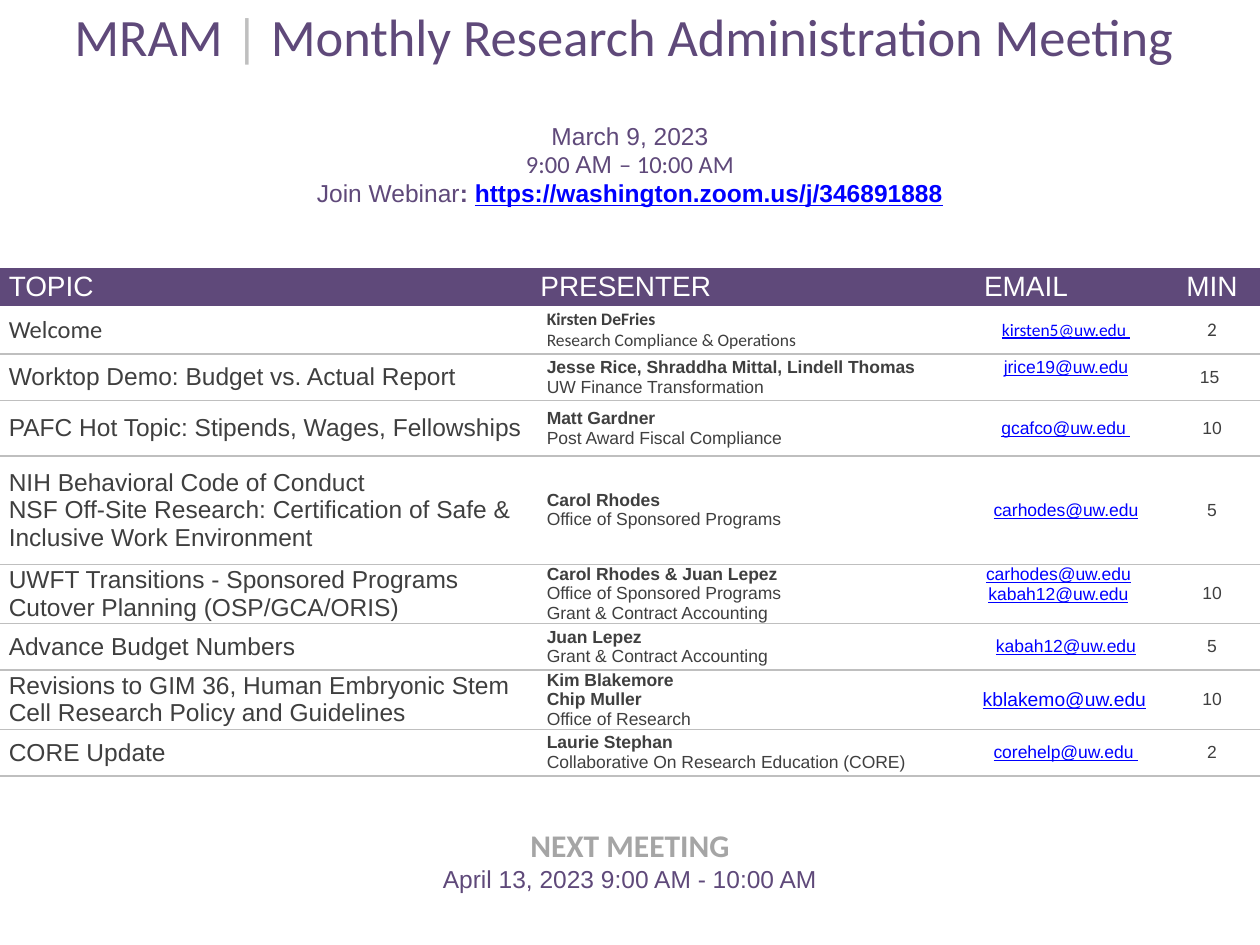
from lxml import etree
from pptx import Presentation
from pptx.dml.color import RGBColor
from pptx.enum.text import MSO_ANCHOR, PP_ALIGN
from pptx.oxml.ns import qn
from pptx.util import Inches, Pt

LEFT, CENTER = PP_ALIGN.LEFT, PP_ALIGN.CENTER
MIDDLE, BOTTOM = MSO_ANCHOR.MIDDLE, MSO_ANCHOR.BOTTOM
PURPLE, GREY, RULE = "5F497A", "A5A5A5", "BFBFBF"
TEXT, LINK, WHITE = "3F3F3F", "0000FF", "FFFFFF"
NO_STYLE = "{2D5ABB26-0587-4C30-8999-92F81FD0307C}"

COLS = [4.22, 3.46, 1.56, 0.76]
HEAD_ROWS, LAST_ROW = [0.56, 1.57, 0.3], 1.09
LINE = 0.15  # height of one line of 10 pt text

# Topic lines, presenters, offices, emails, minutes, row height
AGENDA = [
    (["Welcome"], ["Kirsten DeFries"], ["Research Compliance & Operations"],
     ["kirsten5@uw.edu "], "2", 0.38),
    (["Worktop Demo: Budget vs. Actual Report"],
     ["Jesse Rice, Shraddha Mittal, Lindell Thomas"],
     ["UW Finance Transformation"], ["jrice19@uw.edu"], "15 ", 0.37),
    (["PAFC Hot Topic: Stipends, Wages, Fellowships"], ["Matt Gardner"],
     ["Post Award Fiscal Compliance"], ["gcafco@uw.edu "], "10", 0.44),
    (["NIH Behavioral Code of Conduct",
      "NSF Off-Site Research: Certification of Safe & Inclusive Work Environment"],
     ["Carol Rhodes"], ["Office of Sponsored Programs"],
     ["carhodes@uw.edu"], "5", 0.86),
    (["UWFT Transitions - Sponsored Programs Cutover Planning (OSP/GCA/ORIS)"],
     ["Carol Rhodes & Juan Lepez"],
     ["Office of Sponsored Programs", "Grant & Contract Accounting"],
     ["carhodes@uw.edu", "kabah12@uw.edu"], "10", 0.47),
    (["Advance Budget Numbers"], ["Juan Lepez"],
     ["Grant & Contract Accounting"], ["kabah12@uw.edu"], "5", 0.37),
    (["Revisions to GIM 36, Human Embryonic Stem Cell Research Policy and Guidelines"],
     ["Kim Blakemore", "Chip Muller"], ["Office of Research"],
     ["kblakemo@uw.edu"], "10", 0.47),
    (["CORE Update"], ["Laurie Stephan"],
     ["Collaborative On Research Education (CORE)"],
     ["corehelp@uw.edu "], "2", 0.37),
]


def rgb(value):
    return RGBColor.from_string(value)


def run(text, size=14, color=TEXT, font="Arial", bold=False, underline=False):
    """Return a function that appends the formatted text to a paragraph."""
    def add(p):
        r = p.add_run()
        r.text = text
        f = r.font
        f.size, f.name, f.bold, f.underline = Pt(size), font, bold, underline
        f.color.rgb = rgb(color)
    return add


class Agenda:
    """The current slide and its meeting table."""

    def __init__(self, prs):
        self.slide = prs.slides.add_slide(prs.slide_layouts[6])

    def table(self, cols, rows):
        frame = self.slide.shapes.add_table(
            len(rows), len(cols), 0, 0, Inches(sum(cols)), Inches(sum(rows)))
        self.tbl = frame.table
        self.tbl.first_row = self.tbl.horz_banding = False
        frame._element.find(".//" + qn("a:tableStyleId")).text = NO_STYLE
        for col, width in zip(self.tbl.columns, cols):
            col.width = Inches(width)
        for row, height in zip(self.tbl.rows, rows):
            row.height = Inches(height)

    def cell(self, row, col, lines, align=LEFT, anchor=MIDDLE, fill=WHITE,
             margins=(0.07, 0, 0.07, 0), rule=False):
        """Fill a cell; each line is a list of runs."""
        c = self.tbl.cell(row, col)
        c.vertical_anchor = anchor
        c.margin_left, c.margin_top, c.margin_right, c.margin_bottom = map(Inches, margins)
        c.fill.solid()
        c.fill.fore_color.rgb = rgb(fill)
        if rule:
            self.rule_below(c)
        tf = c.text_frame
        for i, runs in enumerate(lines):
            p = tf.add_paragraph() if i else tf.paragraphs[0]
            p.alignment = align
            for add in runs:
                add(p)

    def wide_cell(self, row, lines, **style):
        """Fill one cell that spans the whole row."""
        self.tbl.cell(row, 0).merge(self.tbl.cell(row, len(COLS) - 1))
        self.cell(row, 0, lines, align=CENTER, **style)

    def rule_below(self, c):
        ln = etree.Element(qn("a:lnB"), w=str(Pt(1)))
        fill = etree.SubElement(ln, qn("a:solidFill"))
        etree.SubElement(fill, qn("a:srgbClr"), val=RULE)
        c._tc.get_or_add_tcPr().insert(0, ln)

    def topic_row(self, row, topic, people, offices, emails, minutes):
        first, large = row == len(HEAD_ROWS), emails == ["kblakemo@uw.edu"]
        font = "Calibri" if first else "Arial"
        self.cell(row, 0, [[run(t, font=font)] for t in topic], rule=True)
        self.cell(row, 1,
                  [[run(t, 10, font=font, bold=True)] for t in people]
                  + [[run(t, 10, font=font)] for t in offices],
                  margins=(0.12, 0, 0.12, 0), rule=True)
        # A pair of emails, and the second row's email, sit one line higher
        pair = len(emails) > 1
        raised = pair or row == len(HEAD_ROWS) + 1
        self.cell(row, 2,
                  [[run(t, 11 if large else 10, LINK, font, underline=True)]
                   for t in emails],
                  align=LEFT if large else CENTER, rule=True,
                  margins=(0 if pair else 0.12, 0, 0.12, LINE if raised else 0))
        self.cell(row, 3, [[run(minutes, 11 if first else 10, font=font)]],
                  align=CENTER, rule=True)


def main():
    prs = Presentation()
    prs.slide_width, prs.slide_height = Inches(10), Inches(7.5)
    s = Agenda(prs)
    s.table(COLS, HEAD_ROWS + [item[-1] for item in AGENDA] + [LAST_ROW])

    # Title
    s.wide_cell(0, [[run("MRAM ", 30, PURPLE, "Calibri"),
                     run("|", 30, RULE, "Calibri"),
                     run(" Monthly Research Administration Meeting ",
                         30, PURPLE, "Calibri")]], anchor=BOTTOM)

    # Date, time and webinar address
    s.wide_cell(1, [
        [run("March 9, 2023", color=PURPLE)],
        [run("9:00 ", color=PURPLE, font="Calibri"), run("AM ", color=PURPLE),
         run("– 10:00 AM", color=PURPLE, font="Calibri")],
        [run("Join Webinar", color=PURPLE), run(": ", color=PURPLE, bold=True),
         run("https://washington.zoom.us/j/346891888", color=LINK,
             bold=True, underline=True)],
    ], anchor=BOTTOM, margins=(0.07, 0, 0.07, 0.48))

    # Column heads
    for col, head in enumerate(["TOPIC", "PRESENTER", " EMAIL", "MIN"]):
        s.cell(2, col, [[run(head, 16, WHITE)]], fill=PURPLE,
               align=CENTER if head == "MIN" else LEFT)

    # Agenda
    for row, item in enumerate(AGENDA, len(HEAD_ROWS)):
        s.topic_row(row, *item[:-1])

    # Next meeting
    s.wide_cell(len(HEAD_ROWS) + len(AGENDA), [
        [run("NEXT MEETING", 18, GREY, "Calibri", bold=True)],
        [run("April 13, 2023 9:00 AM - 10:00 AM", color=PURPLE)],
    ], margins=(0.07, 0.25, 0.07, 0))

    prs.save("out.pptx")


if __name__ == "__main__":
    main()
